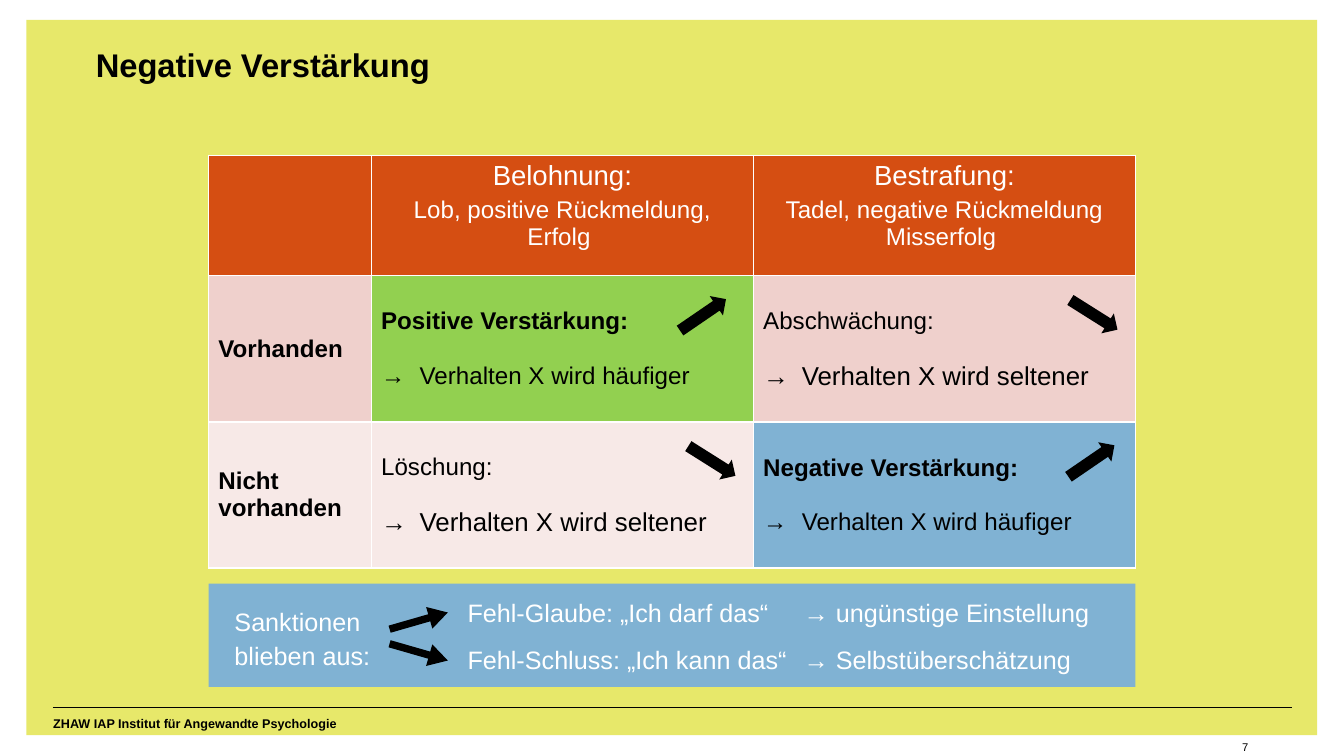
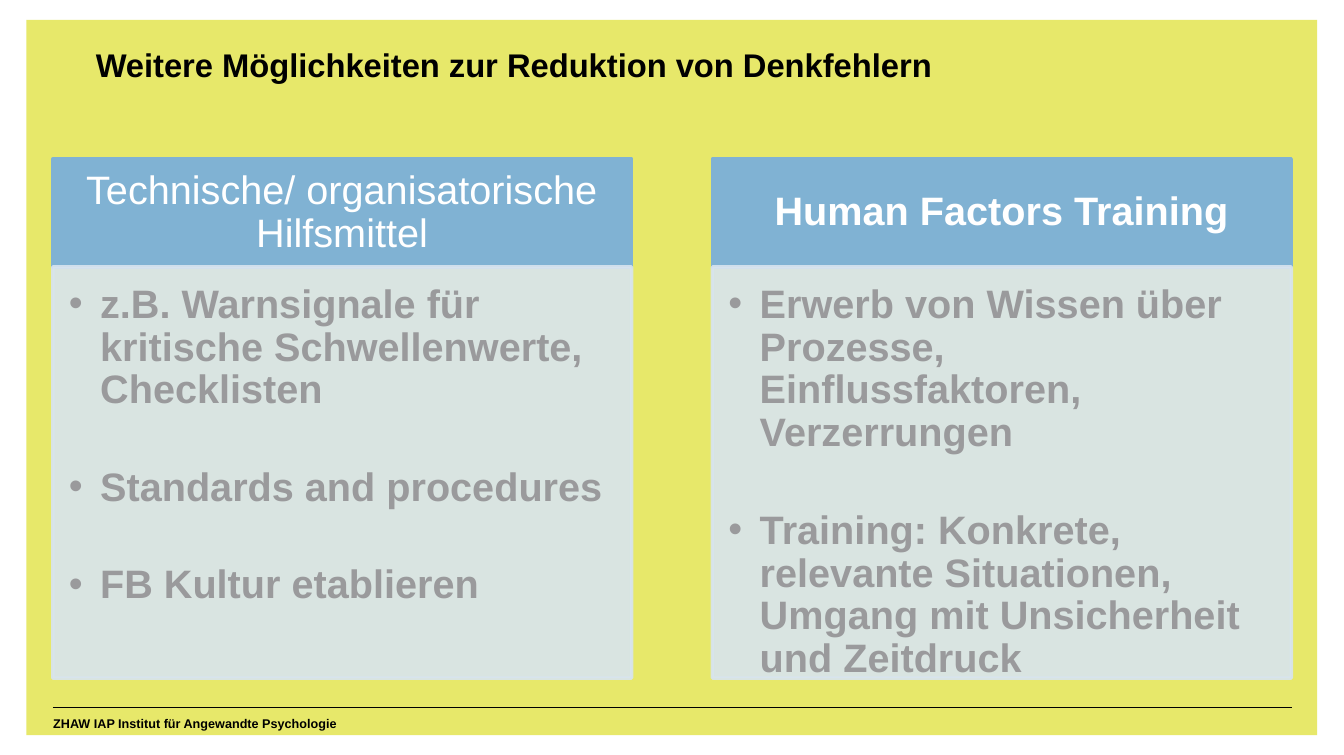
from dataclasses import dataclass

from lxml import etree
from pptx import Presentation
from pptx import util as u
from pptx.dml.color import RGBColor
from pptx.enum import shapes, text
from pptx.oxml.ns import qn

Cm, Pt = u.Cm, u.Pt
LEFT, MID, RIGHT = text.PP_ALIGN.LEFT, text.PP_ALIGN.CENTER, text.PP_ALIGN.RIGHT
TOP, CENTER = text.MSO_ANCHOR.TOP, text.MSO_ANCHOR.MIDDLE
RECT, ARROW = shapes.MSO_SHAPE.RECTANGLE, shapes.MSO_SHAPE.RIGHT_ARROW


@dataclass(frozen=True)
class Theme:
    font: str = "Arial"
    black: str = "000000"
    white: str = "FFFFFF"
    lime: str = "D7DA08"
    blue: str = "80B2D3"
    pale: str = "D8E4EF"
    gray: str = "9A9A9C"
    rust: str = "D54E12"
    green: str = "92D050"
    rose: str = "EFD0CC"
    blush: str = "F7E9E7"
    title: float = 19
    panel: float = 23
    head: float = 16
    large: float = 15
    note: float = 14.6
    cell: float = 14
    foot: float = 7.3
    page: float = 6.5


T = Theme()


def rgb(code):
    return RGBColor.from_string(code)


def add(parent, tag, **attrs):
    return etree.SubElement(parent, qn(tag), {k: str(v) for k, v in attrs.items()})


def write(para, words, size=T.cell, color=T.black, bold=False, align=LEFT,
          before=0, after=0, lead=1.0, bullet=None, indent=0, tab=None):
    para.alignment, para.line_spacing = align, lead
    para.space_before, para.space_after = Pt(before), Pt(after)
    props = para._p.get_or_add_pPr()
    if bullet:
        props.set("marL", str(Cm(indent)))
        props.set("indent", str(-Cm(indent)))
        add(props, "a:buFont", typeface=T.font)
        add(props, "a:buChar", char=bullet)
    if tab:
        add(add(props, "a:tabLst"), "a:tab", pos=Cm(tab), algn="l")
    run = para.add_run()
    run.text = words
    font = run.font
    font.name, font.size, font.bold = T.font, Pt(size), bold
    font.color.rgb = rgb(color)


def fill(frame, items, **base):
    for n, item in enumerate(items):
        words, own = (item, {}) if isinstance(item, str) else item
        para = frame.add_paragraph() if n else frame.paragraphs[0]
        look = {**base, **own}
        if not n:
            look["before"] = 0
        write(para, words, **look)


class Deck:
    def __init__(self):
        self.prs = Presentation()
        self.prs.slide_width, self.prs.slide_height = u.Inches(10.83), u.Inches(6.08)
        self.slide = None

    def start(self, title, layout):
        first = self.slide is None
        self.slide = self.prs.slides.add_slide(self.prs.slide_layouts.get_by_name(layout))
        if first:
            self.master()
        self.holder(0, (1.96, 0.91, 19.81, 1.8), [title], size=T.title, bold=True)

    def master(self):
        parts = [
            self.shape((0.54, 0.41, 26.42, 14.63), T.lime, alpha=60),
            self.line(1.08, 14.46, 26.44, 14.46, 0.25),
            self.text((1.09, 14.69, 12.45, 0.48),
                      ["ZHAW IAP Institut für Angewandte Psychologie"],
                      pad=(0, 0, 0, 0), size=T.foot, bold=True, lead=Pt(T.foot)),
        ]
        tree = self.prs.slide_master.shapes._spTree
        for n, part in enumerate(parts, 20):
            part._element.xpath("./*/p:cNvPr")[0].set("id", str(n))
            tree.append(part._element)

    def frame(self, shape, items, pad, anchor, **look):
        frame = shape.text_frame
        frame.word_wrap, frame.auto_size = True, text.MSO_AUTO_SIZE.NONE
        frame.vertical_anchor = anchor
        (frame.margin_left, frame.margin_top,
         frame.margin_right, frame.margin_bottom) = map(Cm, pad)
        fill(frame, items, **look)
        return shape

    def text(self, at, items, pad=(0.25, 0.13, 0.25, 0.13), **look):
        box = self.slide.shapes.add_textbox(*map(Cm, at))
        return self.frame(box, items, pad, TOP, **look)

    def holder(self, idx, at, items, pad=(0, 0, 0, 0), anchor=TOP, **look):
        shape = self.slide.placeholders[idx]
        shape.left, shape.top, shape.width, shape.height = map(Cm, at)
        return self.frame(shape, items, pad, anchor, **look)

    def paint(self, shape, color, edge=0, alpha=None):
        shape.fill.solid()
        shape.fill.fore_color.rgb = rgb(color)
        if edge:
            shape.line.color.rgb = rgb(color)
            shape.line.width = Pt(edge)
        else:
            shape.line.fill.background()
        if alpha:
            for tint in shape._element.spPr.iter(qn("a:srgbClr")):
                add(tint, "a:alpha", val=alpha * 1000)

    def shape(self, at, color, kind=RECT, alpha=None, turn=0, adjust=()):
        shape = self.slide.shapes.add_shape(kind, *map(Cm, at))
        shape.shadow.inherit = False
        shape.rotation = turn
        for n, value in enumerate(adjust):
            shape.adjustments[n] = value
        self.paint(shape, color, alpha=alpha)
        return shape

    def line(self, x1, y1, x2, y2, width):
        line = self.slide.shapes.add_connector(
            shapes.MSO_CONNECTOR.STRAIGHT, *map(Cm, (x1, y1, x2, y2)))
        line.line.color.rgb = rgb(T.black)
        line.line.width = Pt(width)
        add(line._element.spPr, "a:effectLst")
        return line

    def table(self, at, cols, rows, cells):
        shape = self.slide.shapes.add_table(
            len(rows), len(cols), *map(Cm, (*at, sum(cols), sum(rows))))
        table = shape.table
        table.first_row = table.horz_banding = False
        for col, size in zip(table.columns, cols):
            col.width = Cm(size)
        for row, size in zip(table.rows, rows):
            row.height = Cm(size)
        for r, line in enumerate(cells):
            for c, (color, items) in enumerate(line):
                self.cell(table.cell(r, c), color, items, TOP if r == 0 else CENTER)

    def cell(self, cell, color, items, anchor):
        cell.fill.solid()
        cell.fill.fore_color.rgb = rgb(color)
        cell.vertical_anchor = anchor
        cell.margin_left = cell.margin_right = Cm(0.2)
        cell.margin_top = cell.margin_bottom = Cm(0.1)
        props = cell._tc.get_or_add_tcPr()
        for n, side in enumerate("LRTB"):
            edge = add(props, "a:ln" + side, w=Pt(1))
            add(add(edge, "a:solidFill"), "a:srgbClr", val=T.white)
            props.insert(n, edge)
        fill(cell.text_frame, items)

    def panel(self, idx, left, head, bold, items):
        top = self.holder(idx, (left, 3.25, 11.85, 2.21), [head],
                          pad=(0.46, 0.25, 0.46, 0.25), anchor=CENTER, size=T.panel,
                          color=T.white, bold=bold, align=MID, lead=0.9)
        self.paint(top, T.blue, edge=2)
        body = self.holder(idx + 1, (left, 5.46, 11.85, 8.41), items,
                           pad=(0.33, 0.35, 0.46, 0.51), size=T.panel, color=T.gray,
                           bold=True, lead=0.9, before=31.7, bullet="•", indent=0.64)
        self.paint(body, T.pale, edge=2, alpha=90)


def header(head, *lines):
    look = dict(color=T.white, align=MID)
    return T.rust, [(head, dict(look, size=T.head, after=3)),
                    *((line, look) for line in lines)]


def label(color, words):
    return color, [(words, dict(bold=True))]


def effect(color, head, trend, bold=False, size=T.large):
    return color, [(head, dict(bold=bold)),
                   (f"Verhalten X wird {trend}",
                    dict(size=size, before=16, bullet="→", indent=0.79))]


def matrix(deck):
    deck.start("Negative Verstärkung", "Title Only")
    deck.shape((4.27, 11.94, 18.97, 2.11), T.blue)
    deck.text((23.67, 15.14, 1.88, 0.28), ["7"], pad=(0, 0, 0, 0),
              size=T.page, align=RIGHT)
    often = dict(trend="häufiger", bold=True, size=T.cell)
    deck.table((4.27, 3.18), (3.33, 7.82, 7.82), (2.46, 2.99, 2.99), [
        [(T.rust, []),
         header("Belohnung:", "Lob, positive Rückmeldung,", "Erfolg "),
         header("Bestrafung:", "Tadel, negative Rückmeldung", "Misserfolg ")],
        [label(T.rose, "Vorhanden"),
         effect(T.green, "Positive Verstärkung:", **often),
         effect(T.rose, "Abschwächung:", "seltener")],
        [label(T.blush, "Nicht vorhanden"),
         effect(T.blush, "Löschung:", "seltener"),
         effect(T.blue, "Negative Verstärkung:", **often)],
    ])
    note = dict(size=T.note, color=T.white)
    deck.text((4.55, 12.22, 3.65, 1.63), ["Sanktionen blieben aus:"], lead=1.1, **note)
    deck.text((9.32, 12.09, 13.51, 1.85), [
        ("Fehl-Glaube: „Ich darf das“\t→ ungünstige Einstellung", dict(after=9.7)),
        "Fehl-Schluss: „Ich kann das“\t→ Selbstüberschätzung"], tab=6.88, **note)
    for top, turn in ((12.47, -16), (13.11, 16)):
        deck.shape((7.95, top, 1.24, 0.46), T.black, ARROW, turn=turn, adjust=(0.33, 0.86))
    up, down = -34.4, 32.2
    for left, top, turn in ((13.82, 6.2, up), (21.82, 6.2, down),
                            (14, 9.19, down), (21.77, 9.19, up)):
        deck.shape((left, top, 1.14, 0.48), T.black, ARROW, turn=turn)


def options(deck):
    deck.start("Weitere Möglichkeiten zur Reduktion von Denkfehlern", "Comparison")
    deck.panel(1, 1.08, "Technische/ organisatorische Hilfsmittel", False, [
        "z.B. Warnsignale für kritische Schwellenwerte, Checklisten",
        "Standards and procedures",
        "FB Kultur etablieren"])
    deck.panel(3, 14.58, "Human Factors Training", True, [
        "Erwerb von Wissen über Prozesse, Einflussfaktoren, Verzerrungen",
        "Training: Konkrete, relevante Situationen, Umgang mit Unsicherheit und Zeitdruck"])


def main():
    deck = Deck()
    matrix(deck)
    options(deck)
    deck.prs.save("out.pptx")


if __name__ == "__main__":
    main()
